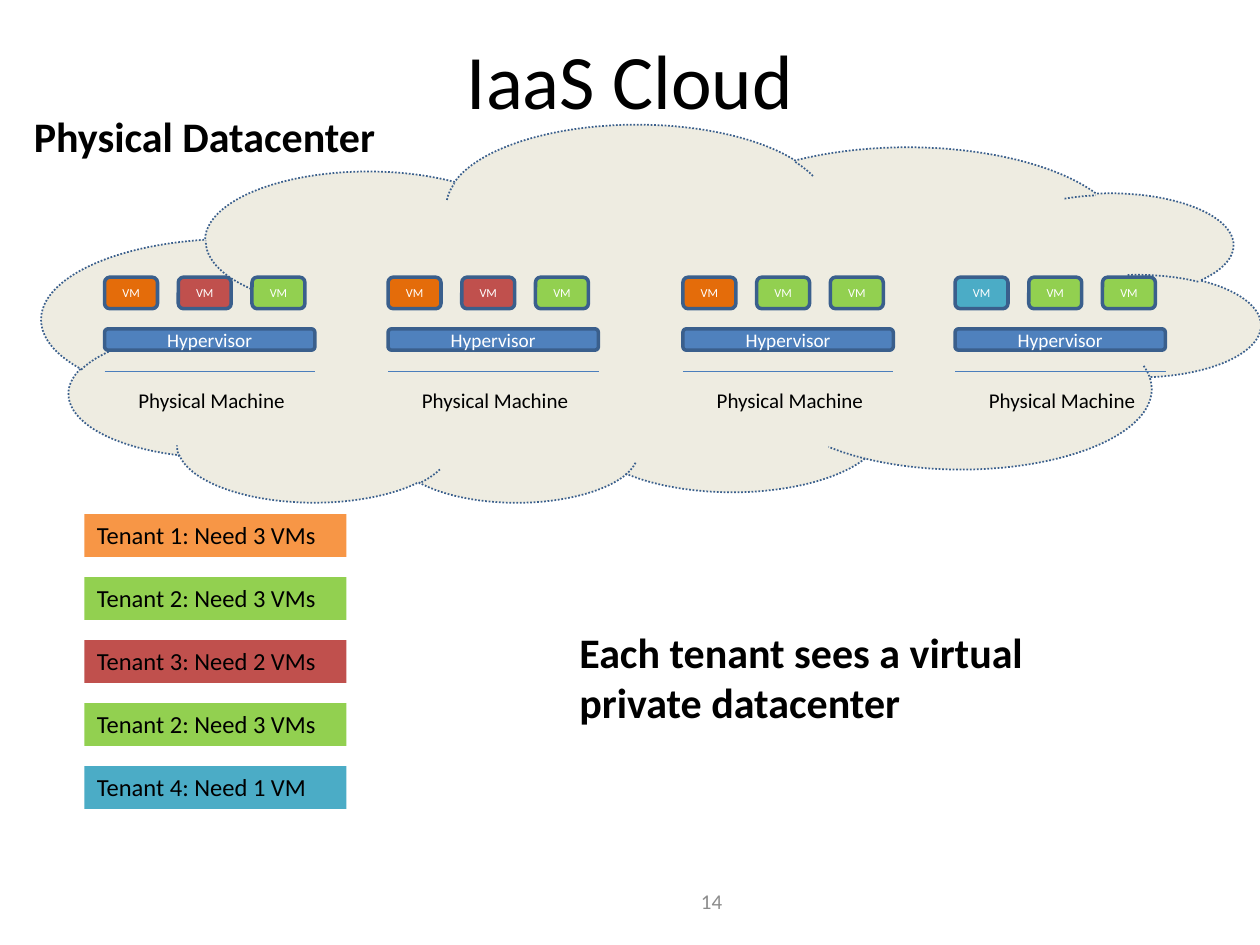
from lxml import etree
from pptx import Presentation
from pptx.dml.color import RGBColor
from pptx.enum.dml import MSO_LINE
from pptx.enum.shapes import MSO_CONNECTOR, MSO_SHAPE
from pptx.enum.text import MSO_ANCHOR, PP_ALIGN
from pptx.oxml.ns import qn
from pptx.util import Inches, Pt

CLOUD, RECTANGLE, ROUNDED = MSO_SHAPE.CLOUD, MSO_SHAPE.RECTANGLE, MSO_SHAPE.ROUNDED_RECTANGLE
STRAIGHT = MSO_CONNECTOR.STRAIGHT
DOTTED = MSO_LINE.ROUND_DOT
LEFT, CENTER, RIGHT = PP_ALIGN.LEFT, PP_ALIGN.CENTER, PP_ALIGN.RIGHT
TOP, MIDDLE = MSO_ANCHOR.TOP, MSO_ANCHOR.MIDDLE

BLACK = RGBColor(0x00, 0x00, 0x00)
WHITE = RGBColor(0xFF, 0xFF, 0xFF)
GRAY = RGBColor(0x8C, 0x8C, 0x8C)
CREAM = RGBColor(0xEE, 0xEC, 0xE1)
NAVY = RGBColor(0x3A, 0x5F, 0x8C)
BLUE = RGBColor(0x4F, 0x81, 0xBD)
LINE_BLUE = RGBColor(0x4B, 0x7E, 0xBC)
DARK_ORANGE = RGBColor(0xE4, 0x6C, 0x0A)
ORANGE = RGBColor(0xF7, 0x96, 0x46)
RED = RGBColor(0xC0, 0x50, 0x4D)
GREEN = RGBColor(0x92, 0xD0, 0x50)
TEAL = RGBColor(0x4B, 0xAC, 0xC6)

FONT = "Calibri"
MACHINES = [
    (0.83, (DARK_ORANGE, RED, GREEN)),
    (3.08, (DARK_ORANGE, RED, GREEN)),
    (5.42, (DARK_ORANGE, GREEN, GREEN)),
    (7.58, (TEAL, GREEN, GREEN)),
]
MACHINE_WIDTH = 1.67
VM_PITCH = 0.585
TENANTS = [
    ("Tenant 1: Need 3 VMs", ORANGE),
    ("Tenant 2: Need 3 VMs", GREEN),
    ("Tenant 3: Need 2 VMs", RED),
    ("Tenant 2: Need 3 VMs", GREEN),
    ("Tenant 4: Need 1 VM", TEAL),
]


def write_text(shape, text, size=12, color=BLACK, bold=False, align=LEFT, anchor=TOP):
    frame = shape.text_frame
    frame.word_wrap = True
    frame.vertical_anchor = anchor
    para = frame.paragraphs[0]
    para.alignment = align
    span = para.add_run()
    span.text = text
    span.font.name = FONT
    span.font.size = Pt(size)
    span.font.bold = bold
    span.font.color.rgb = color


def add_label(page, left, top, width, height, text, **text_format):
    box = page.shapes.add_textbox(Inches(left), Inches(top), Inches(width), Inches(height))
    write_text(box, text, **text_format)


def add_block(page, kind, left, top, width, height, fill, line_width=0):
    block = page.shapes.add_shape(kind, Inches(left), Inches(top), Inches(width), Inches(height))
    block.shadow.inherit = False
    block.fill.solid()
    block.fill.fore_color.rgb = fill
    if line_width:
        block.line.color.rgb = NAVY
        block.line.width = Pt(line_width)
    else:
        block.line.fill.background()
    return block


def add_rule(page, left, top, width):
    rule = page.shapes.add_connector(
        STRAIGHT, Inches(left), Inches(top), Inches(left + width), Inches(top)
    )
    rule.line.color.rgb = LINE_BLUE
    rule.line.width = Pt(0.75)
    etree.SubElement(rule._element.spPr, qn("a:effectLst"))


def add_cloud(page):
    cloud = add_block(page, CLOUD, 0.33, 1, 9.67, 3, CREAM, line_width=1)
    cloud.line.dash_style = DOTTED
    cloud.rotation = 180


def add_machine(page, left, vm_colors):
    for index, color in enumerate(vm_colors):
        vm = add_block(page, ROUNDED, left + index * VM_PITCH, 2.2, 0.42, 0.25, color, line_width=2)
        write_text(vm, "VM", size=7, color=WHITE, align=CENTER, anchor=MIDDLE)
    hypervisor = add_block(page, ROUNDED, left, 2.61, MACHINE_WIDTH, 0.17, BLUE, line_width=2)
    write_text(hypervisor, "Hypervisor", size=11, color=WHITE, align=CENTER, anchor=MIDDLE)
    add_rule(page, left, 2.95, MACHINE_WIDTH)
    add_label(page, left + 0.17, 3.03, 1.5, 0.3, "Physical Machine")


def main():
    deck = Presentation()
    deck.slide_width, deck.slide_height = Inches(10), Inches(7.5)
    page = deck.slides.add_slide(deck.slide_layouts[6])

    add_cloud(page)
    add_label(page, 0.5, 0, 9, 1.25, "IaaS Cloud", size=44, align=CENTER, anchor=MIDDLE)
    for left, vm_colors in MACHINES:
        add_machine(page, left, vm_colors)
    for index, (need, color) in enumerate(TENANTS):
        tenant = add_block(page, RECTANGLE, 0.67, 4.08 + index * 0.5, 2.08, 0.34, color)
        write_text(tenant, need, size=14)
    add_label(page, 0.17, 0.83, 3, 0.5, "Physical Datacenter", size=24, bold=True)
    add_label(page, 3.5, 6.95, 2.33, 0.4, "14", color=GRAY, align=RIGHT, anchor=MIDDLE)
    add_label(page, 4.5, 4.92, 4.17, 0.91, "Each tenant sees a virtual private datacenter",
              size=24, bold=True)

    deck.save("out.pptx")


if __name__ == "__main__":
    main()
